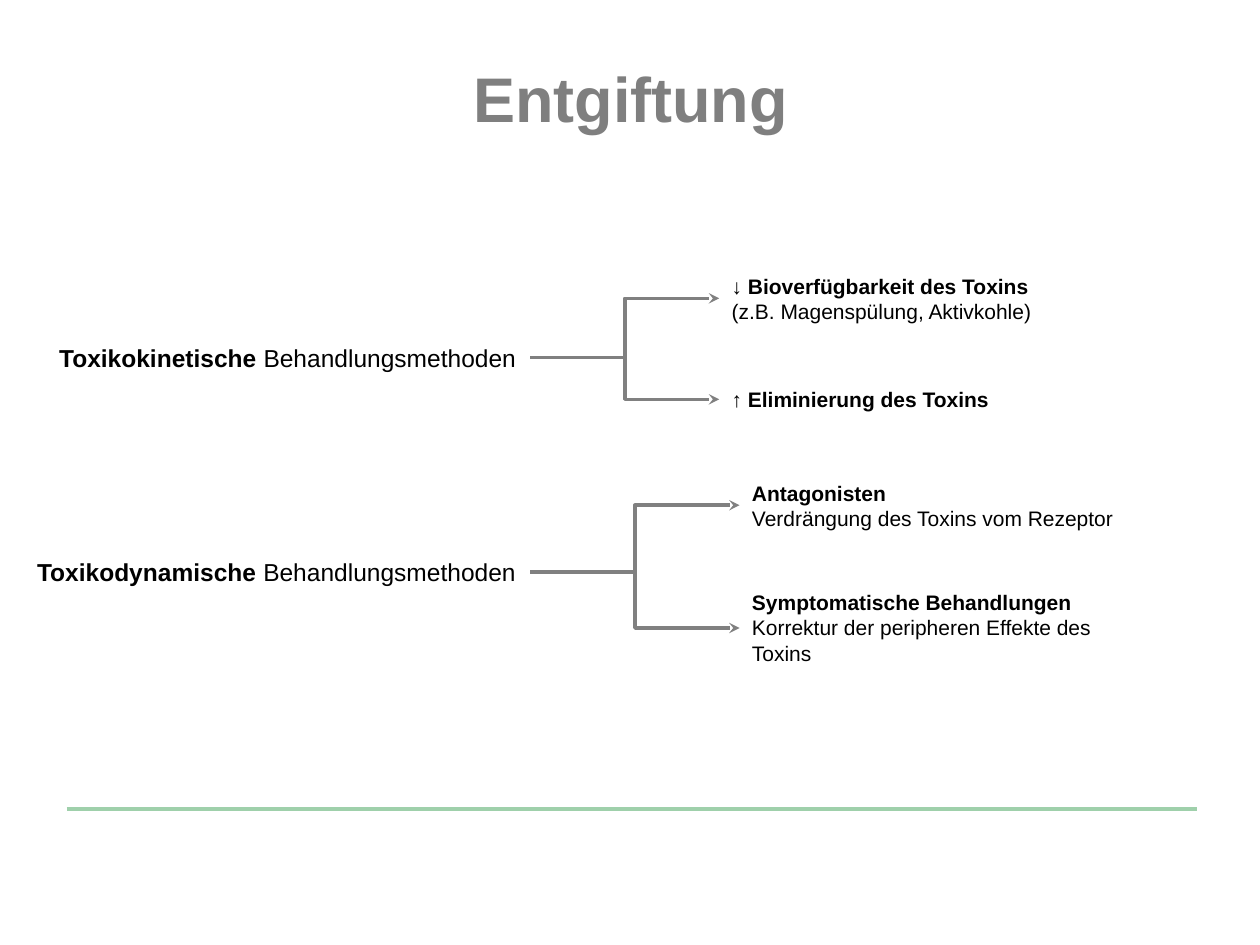
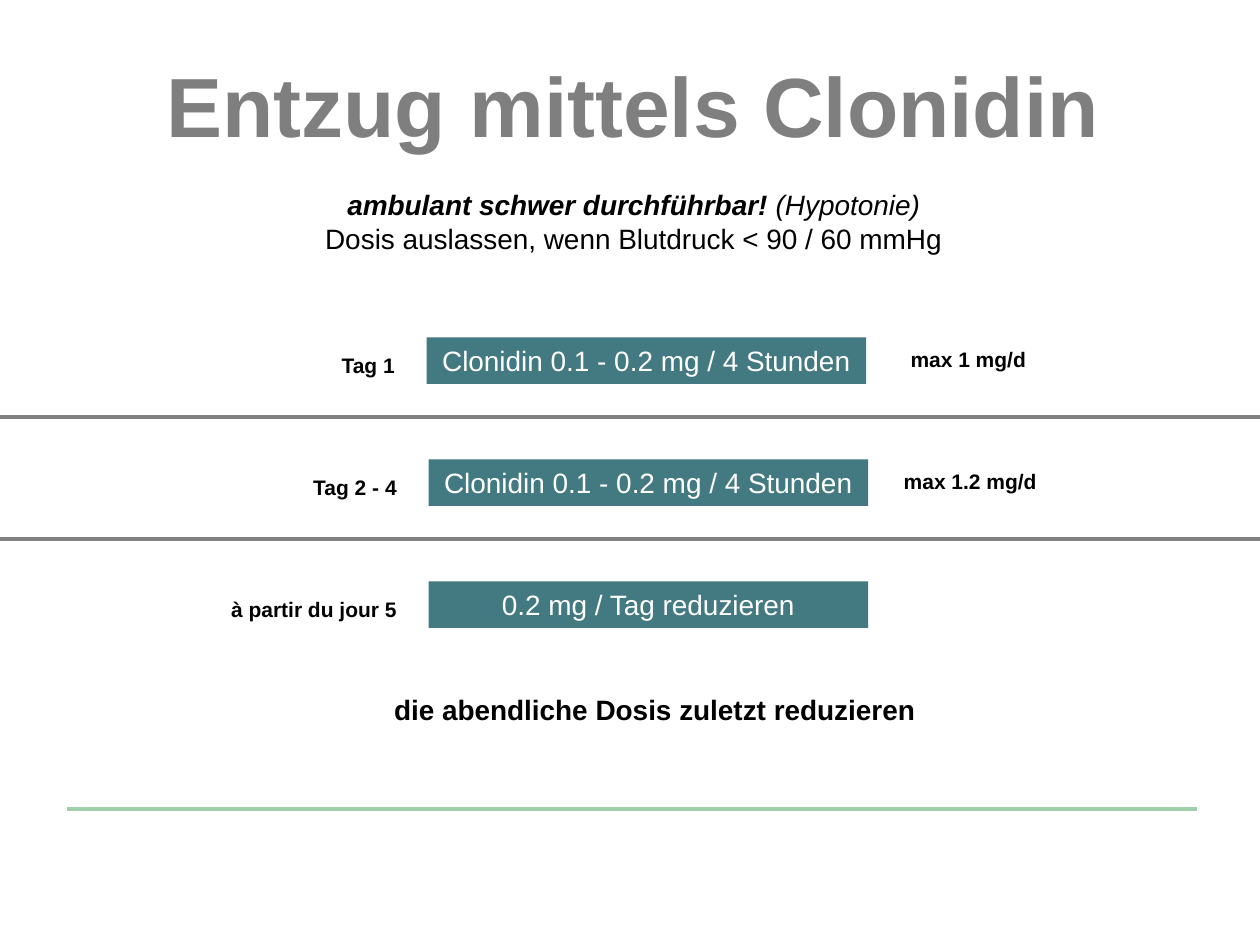
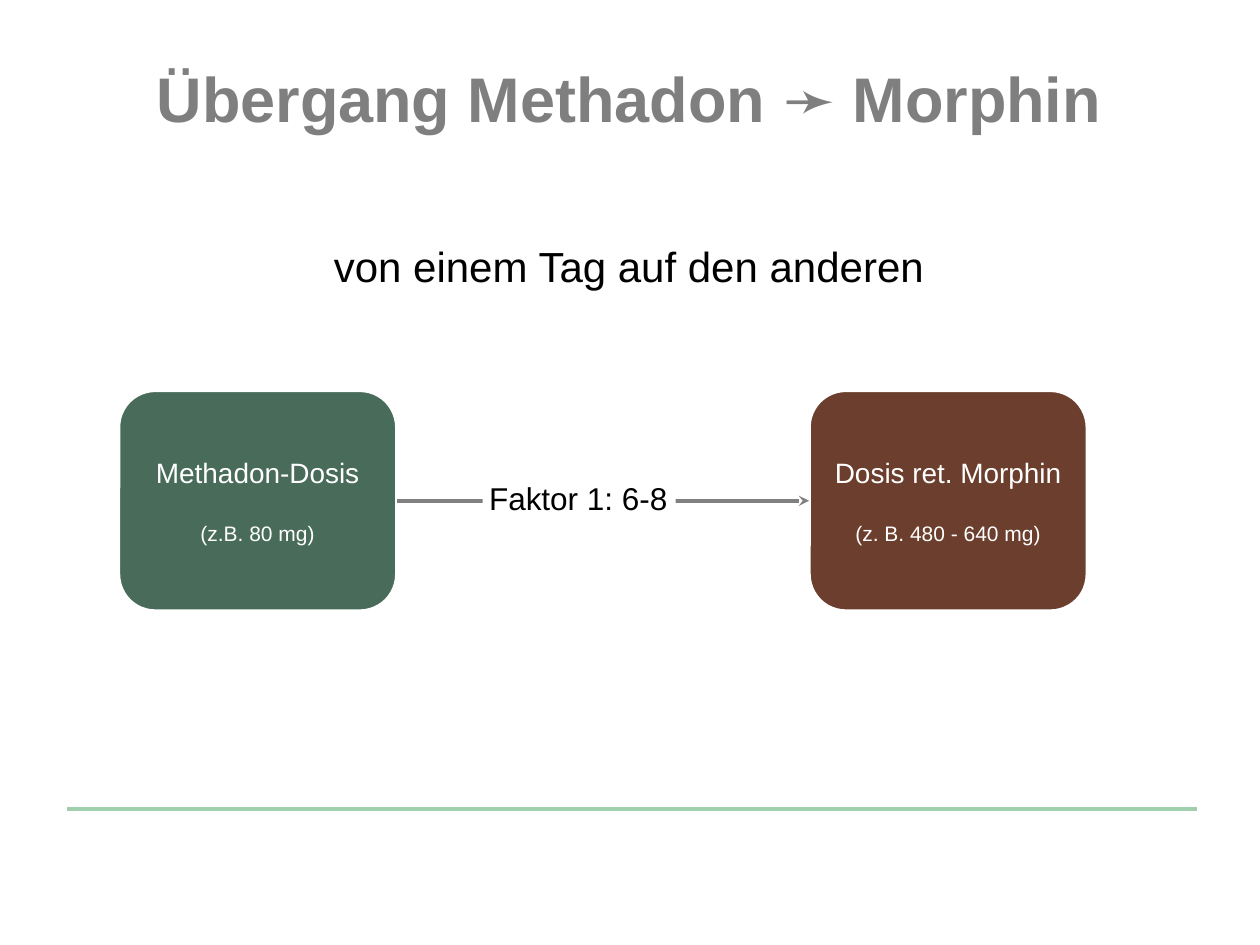
from lxml import etree
from pptx import Presentation
from pptx import util as u
from pptx.dml.color import RGBColor
from pptx.enum import shapes, text
from pptx.oxml import ns

FONT = "Arial"
BLACK, WHITE, GREY = "000000", "FFFFFF", "808080"
TITLE_GREY, RULE_GREEN = "7F7F7F", "9FD0AB"
TEAL, GREEN, BROWN = "437980", "496B5A", "6B3E2D"
LEFT, CENTER, RIGHT = text.PP_ALIGN.LEFT, text.PP_ALIGN.CENTER, text.PP_ALIGN.RIGHT
ELBOW, STRAIGHT = shapes.MSO_CONNECTOR.ELBOW, shapes.MSO_CONNECTOR.STRAIGHT
RECTANGLE = shapes.MSO_SHAPE.RECTANGLE
ROUNDED = shapes.MSO_SHAPE.ROUNDED_RECTANGLE
SLIDE_WIDTH, SLIDE_HEIGHT = 25.4, 19.05
TIGHT = 0.13


def rgb(value):
    """Return the colour for a hex string."""
    return RGBColor.from_string(value)


def cm(*values):
    """Return the values as lengths in centimetres."""
    return [u.Cm(value) for value in values]


def write(holder, words, size=12, color=BLACK, bold=False, italic=False,
          align=LEFT, before=0, same_line=False):
    """Add a formatted run on a new line or on the current one."""
    frame = holder.text_frame
    paragraph = frame.paragraphs[-1]
    if paragraph.runs and not same_line:
        paragraph = frame.add_paragraph()
    if not same_line:
        paragraph.alignment = align
        paragraph.space_before = u.Pt(before)
    run = paragraph.add_run()
    run.text = words
    font = run.font
    font.name, font.size, font.bold, font.italic = FONT, u.Pt(size), bold, italic
    font.color.rgb = rgb(color)


def set_margins(frame, side=TIGHT):
    """Set the inner margins of a text frame."""
    frame.margin_left = frame.margin_right = u.Cm(side)
    frame.margin_top = frame.margin_bottom = u.Cm(TIGHT)


def add_label(slide, box, wrap=False, side=TIGHT):
    """Add an empty text box."""
    label = slide.shapes.add_textbox(*cm(*box))
    label.text_frame.word_wrap = wrap
    set_margins(label.text_frame, side)
    return label


def add_panel(slide, box, fill, kind=RECTANGLE, outline=None, wrap=True, side=TIGHT):
    """Add a filled shape that can hold text."""
    panel = slide.shapes.add_shape(kind, *cm(*box))
    panel.shadow.inherit = False
    panel.fill.solid()
    panel.fill.fore_color.rgb = rgb(fill)
    if outline:
        panel.line.color.rgb = rgb(outline)
        panel.line.width = u.Pt(2)
    else:
        panel.line.fill.background()
    panel.text_frame.word_wrap = wrap
    set_margins(panel.text_frame, side)
    return panel


def add_line(slide, ends, color=GREY, width=2, kind=STRAIGHT, arrow=False):
    """Add a line between two points, with an optional arrowhead."""
    line = slide.shapes.add_connector(kind, *cm(*ends))
    line.line.color.rgb = rgb(color)
    line.line.width = u.Pt(width)
    properties = line._element.spPr
    if arrow:
        outline = properties.find(ns.qn("a:ln"))
        etree.SubElement(outline, ns.qn("a:tailEnd"), type="stealth")
    etree.SubElement(properties, ns.qn("a:effectLst"))
    return line


def join(slide, start, end, kind=STRAIGHT):
    """Draw an arrow from the right side of one part to the left of another."""
    arrow = add_line(slide, (0, 0, 1, 1), kind=kind, arrow=True)
    arrow.begin_connect(start, 3)
    arrow.end_connect(end, 1)


def start_slide(deck, heading, box, size=36):
    """Add a slide with its title and the green footer rule."""
    slide = deck.slides.add_slide(deck.slide_layouts[6])
    add_line(slide, (1.35, 16.31, 24.13, 16.31), RULE_GREEN, 2.5)
    write(add_label(slide, box, side=0.25), heading, size=size,
          color=TITLE_GREY, bold=True, align=CENTER)
    return slide


def add_branch(slide, box, method, reach, outcomes):
    """Place a treatment method and the arrows to its outcomes."""
    left, top, width, height = box
    source = add_label(slide, box, side=0.25)
    write(source, method + " ", size=14, bold=True, align=CENTER)
    write(source, "Behandlungsmethoden", size=14, same_line=True)
    for rise, outcome_width, outcome_height, strong, detail in outcomes:
        target_box = (left + width + reach, top + rise, outcome_width, outcome_height)
        target = add_label(slide, target_box, wrap=bool(detail), side=0.25)
        write(target, strong, bold=True)
        if detail:
            write(target, detail)
        join(slide, source, target, ELBOW)


def add_dose(slide, box, day, dose, limit):
    """Place one dose bar with its day on the left and limit on the right."""
    left, top, width, height = box
    day_width, day_gap = 4.34, 0.51
    write(add_panel(slide, box, TEAL), dose, size=16, color=WHITE, align=CENTER)
    day_box = (left - day_gap - day_width, top + 0.18, day_width, 0.76)
    write(add_label(slide, day_box, wrap=True), day, bold=True, align=RIGHT)
    if limit:
        limit_box = (left + width + 0.42, top + 0.05, 3.28, 0.76)
        write(add_label(slide, limit_box, wrap=True), limit, bold=True, align=CENTER)
        divider = top + 1.61
        add_line(slide, (0, divider, SLIDE_WIDTH, divider))


def add_drug(slide, box, fill, drug, example):
    """Place a rounded box with a drug dose and its example."""
    drug_box = add_panel(slide, box, fill, ROUNDED, outline=WHITE)
    drug_box.text_frame.vertical_anchor = text.MSO_ANCHOR.MIDDLE
    write(drug_box, drug, size=16, color=WHITE, align=CENTER)
    write(drug_box, example, color=WHITE, align=CENTER, before=18.4)
    return drug_box


def build_detox(deck):
    """Build the slide on detoxification methods."""
    slide = start_slide(deck, "Entgiftung", (9.25, 1.07, 6.93, 1.8))
    add_branch(slide, (0.91, 6.78, 9.78, 0.86), "Toxikokinetische", 3.81, [
        (-1.4, 7.16, 1.27, "↓ Bioverfügbarkeit des Toxins",
         "(z.B. Magenspülung, Aktivkohle)"),
        (0.89, 5.92, 0.76, "↑ Eliminierung des Toxins", None)])
    add_branch(slide, (0.46, 11.1, 10.23, 0.86), "Toxikodynamische", 4.22, [
        (-1.55, 8.05, 1.27, "Antagonisten", "Verdrängung des Toxins vom Rezeptor"),
        (0.66, 7.7, 1.8, "Symptomatische Behandlungen",
         "Korrektur der peripheren Effekte des Toxins")])


def build_clonidine(deck):
    """Build the slide on withdrawal with its dose schedule."""
    slide = start_slide(deck, "Entzug mittels Clonidin", (3, 0.94, 19.53, 2.31), 48)
    warning = add_label(slide, (6.35, 3.66, 12.85, 1.63))
    write(warning, "ambulant schwer durchführbar! ", size=16, bold=True,
          italic=True, align=CENTER)
    write(warning, "(Hypotonie)", size=16, italic=True, same_line=True)
    write(warning, "Dosis auslassen, wenn Blutdruck < 90 / 60 mmHg", size=16,
          align=CENTER)
    regular = "Clonidin 0.1 - 0.2 mg / 4 Stunden"
    schedule = [(8.6, "Tag 1", regular, "max 1 mg/d"),
                (8.64, "Tag 2 - 4", regular, "max 1.2 mg/d"),
                (8.64, "à partir du jour 5", "0.2 mg / Tag reduzieren", None)]
    for row, (left, *entry) in enumerate(schedule):
        add_dose(slide, (left, 6.8 + row * 2.46, 8.86, 0.94), *entry)
    write(add_label(slide, (7.75, 13.84, 10.9, 0.94)),
          "die abendliche Dosis zuletzt reduzieren", size=16, bold=True, align=CENTER)


def build_switch(deck):
    """Build the slide on switching from one drug to the other."""
    slide = start_slide(deck, "Übergang Methadon ➛ Morphin", (2.79, 1.07, 19.79, 1.8))
    write(add_label(slide, (6.48, 4.72, 12.65, 1.27), side=0.25),
          "von einem Tag auf den anderen", size=24)
    top, width, height = 7.87, 5.61, 4.45
    methadone = add_drug(slide, (2.39, top, width, height), GREEN,
                         "Methadon-Dosis", "(z.B. 80 mg)")
    morphine = add_drug(slide, (16.31, top, width, height), BROWN,
                        "Dosis ret. Morphin", "(z. B. 480 - 640 mg)")
    join(slide, methadone, morphine)
    factor = add_panel(slide, (9.73, 9.53, 3.89, 1.02), WHITE, wrap=False)
    write(factor, "Faktor 1: 6-8", size=18)


def main():
    """Build and save the presentation."""
    deck = Presentation()
    deck.slide_width, deck.slide_height = cm(SLIDE_WIDTH, SLIDE_HEIGHT)
    build_detox(deck)
    build_clonidine(deck)
    build_switch(deck)
    deck.save("out.pptx")


if __name__ == "__main__":
    main()
